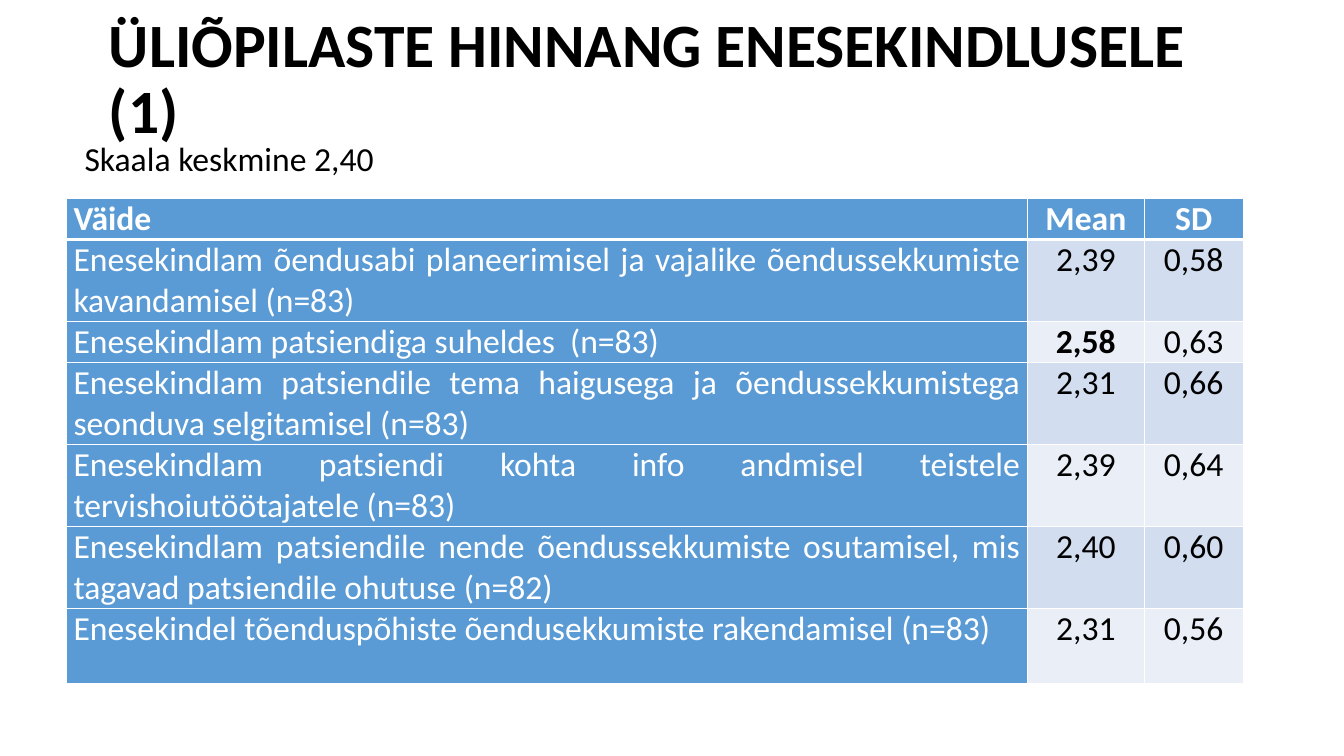
from dataclasses import dataclass

from lxml import etree
from pptx import Presentation
from pptx.dml.color import RGBColor
from pptx.enum.text import MSO_ANCHOR, MSO_AUTO_SIZE, PP_ALIGN
from pptx.oxml.ns import qn
from pptx.util import Inches, Pt

LEFT = PP_ALIGN.LEFT
CENTER = PP_ALIGN.CENTER
JUSTIFY = PP_ALIGN.JUSTIFY
TOP = MSO_ANCHOR.TOP
MIDDLE = MSO_ANCHOR.MIDDLE
NO_FIT = MSO_AUTO_SIZE.NONE
GROW = MSO_AUTO_SIZE.SHAPE_TO_FIT_TEXT
TITLE_ONLY = 5


@dataclass(frozen=True)
class Theme:
    font: str = "Calibri"
    title_size: int = 44
    body_size: int = 24
    ink: str = "000000"
    paper: str = "FFFFFF"
    accent: str = "5B9BD5"
    bands: tuple = ("D2DEEF", "EAEFF7")
    thin: int = 1
    thick: int = 3


THEME = Theme()

HEADER = ("Väide", "Mean", "SD")
RATINGS = (
    ("Enesekindlam õendusabi planeerimisel ja vajalike õendussekkumiste kavandamisel (n=83)",
     "2,39", "0,58"),
    ("Enesekindlam patsiendiga suheldes  (n=83)", "2,58", "0,63"),
    ("Enesekindlam patsiendile tema haigusega ja õendussekkumistega seonduva selgitamisel (n=83)",
     "2,31", "0,66"),
    ("Enesekindlam patsiendi kohta info andmisel teistele tervishoiutöötajatele (n=83)",
     "2,39", "0,64"),
    ("Enesekindlam patsiendile nende õendussekkumiste osutamisel, mis tagavad patsiendile ohutuse (n=82)",
     "2,40", "0,60"),
    ("Enesekindel tõenduspõhiste õendusekkumiste rakendamisel (n=83)", "2,31", "0,56"),
)
HIGHEST_MEAN = max(mean for _, mean, _ in RATINGS)
COLUMN_WIDTHS = (9.53, 1.16, 0.98)
ROW_HEIGHTS = (0.35, 0.74, 0.35, 0.74, 0.74, 0.74, 0.74)


def apply(target, **values):
    for name, value in values.items():
        setattr(target, name, value)


def write(frame, text, size, color, align, bold=False, spacing=1.0):
    para = frame.paragraphs[0]
    apply(para, alignment=align, line_spacing=spacing)
    span = para.add_run()
    span.text = text
    apply(span.font, name=THEME.font, size=Pt(size), bold=bold)
    span.font.color.rgb = RGBColor.from_string(color)


def place(shape, left, top, width, height):
    apply(shape, left=Inches(left), top=Inches(top),
          width=Inches(width), height=Inches(height))


def add_title(page, text):
    title = page.shapes.title
    place(title, 0.98, 0.27, 11.5, 1.06)
    apply(title.text_frame, word_wrap=True, auto_size=NO_FIT, vertical_anchor=MIDDLE)
    write(title.text_frame, text, THEME.title_size, THEME.ink, LEFT, bold=True, spacing=0.9)


def add_caption(page, text):
    box = page.shapes.add_textbox(Inches(0.74), Inches(1.32), Inches(3.19), Inches(0.5))
    apply(box.text_frame, word_wrap=True, auto_size=GROW)
    write(box.text_frame, text, THEME.body_size, THEME.ink, LEFT)


def border(cell, top, bottom):
    properties = cell._tc.get_or_add_tcPr()
    widths = {"a:lnL": THEME.thin, "a:lnR": THEME.thin, "a:lnT": top, "a:lnB": bottom}
    for tag, width in widths.items():
        line = etree.SubElement(properties, qn(tag), w=str(Pt(width)))
        fill = etree.SubElement(line, qn("a:solidFill"))
        etree.SubElement(fill, qn("a:srgbClr"), val=THEME.paper)


def style_cell(cell, text, row, column):
    header, statement = row == 0, column == 0
    accented = header or statement
    border(cell, THEME.thick if row == 1 else THEME.thin,
           THEME.thick if header else THEME.thin)
    cell.fill.solid()
    background = THEME.accent if accented else THEME.bands[(row - 1) % 2]
    cell.fill.fore_color.rgb = RGBColor.from_string(background)
    apply(cell, margin_left=Inches(0.07), margin_right=Inches(0.07),
          margin_top=0, margin_bottom=0, vertical_anchor=TOP)
    write(cell.text_frame, text, THEME.body_size,
          THEME.paper if accented else THEME.ink,
          JUSTIFY if statement else CENTER,
          bold=header or (column == 1 and text == HIGHEST_MEAN))


def add_ratings(page):
    rows = (HEADER, *RATINGS)
    frame = page.shapes.add_table(len(rows), len(HEADER), Inches(0.66), Inches(1.97),
                                  Inches(sum(COLUMN_WIDTHS)), Inches(sum(ROW_HEIGHTS)))
    table = frame.table
    for column, width in zip(table.columns, COLUMN_WIDTHS):
        column.width = Inches(width)
    for row, height in zip(table.rows, ROW_HEIGHTS):
        row.height = Inches(height)
    for row, values in enumerate(rows):
        for column, text in enumerate(values):
            style_cell(table.cell(row, column), text, row, column)


def main():
    deck = Presentation()
    apply(deck, slide_width=Inches(13.33), slide_height=Inches(7.5))
    page = deck.slides.add_slide(deck.slide_layouts[TITLE_ONLY])
    add_title(page, "ÜLIÕPILASTE HINNANG ENESEKINDLUSELE (1)")
    add_ratings(page)
    add_caption(page, "Skaala keskmine 2,40")
    deck.save("out.pptx")


if __name__ == "__main__":
    main()
